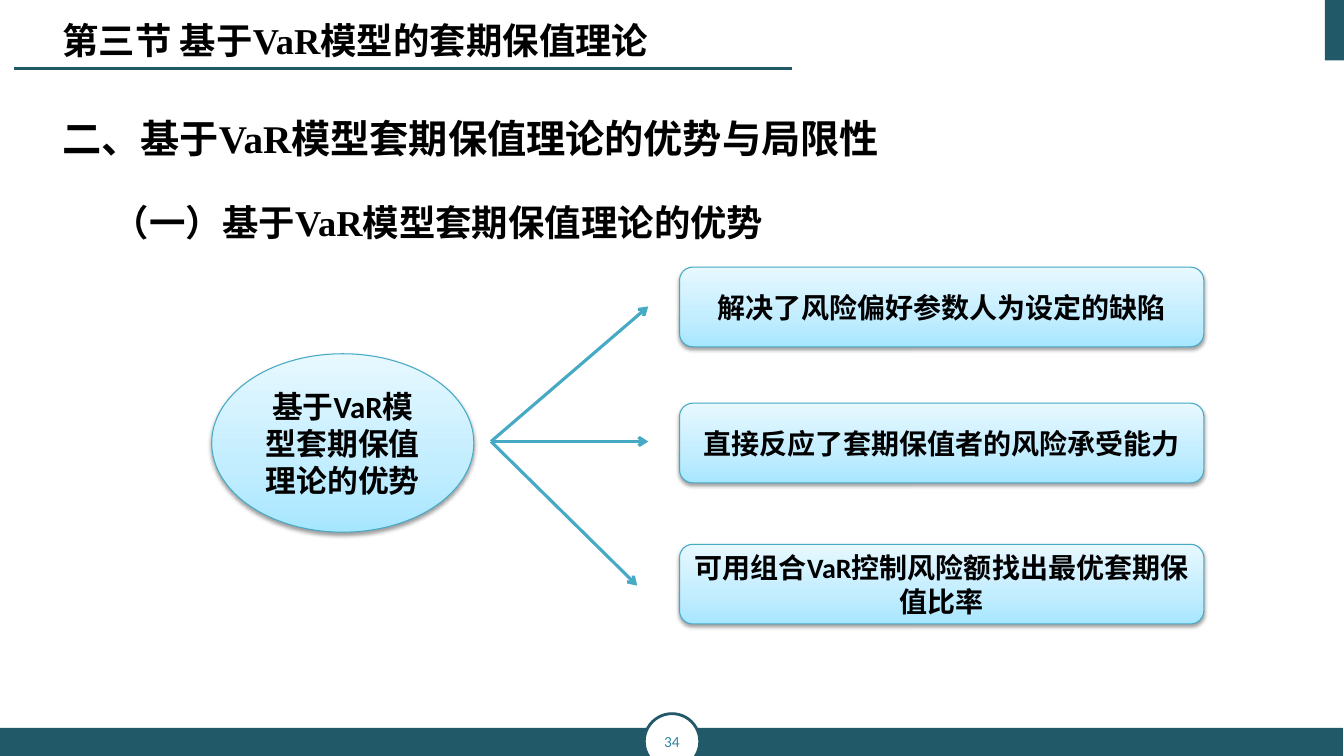
"""Build the slide on the advantages of VaR-based hedging theory."""
from copy import deepcopy
from dataclasses import dataclass
from typing import Optional

from lxml.etree import SubElement
from pptx import Presentation
from pptx.dml.color import RGBColor
from pptx.enum.shapes import MSO_CONNECTOR, MSO_SHAPE
from pptx.enum.text import MSO_ANCHOR, PP_ALIGN
from pptx.oxml.ns import qn
from pptx.util import Inches, Pt

CELL = Inches(0.1)
COLUMNS, ROWS = 133.3, 75

TEAL = RGBColor(0x21, 0x59, 0x68)
PAGE_BLUE = RGBColor(0x31, 0x85, 0x9C)
EDGE_BLUE = RGBColor(0x46, 0xAA, 0xC5)
WHITE = RGBColor(0xFF, 0xFF, 0xFF)
BLACK = RGBColor(0, 0, 0)
GLOW = (
    (0, RGBColor(0xA7, 0xE6, 0xFF)),
    (0.35, RGBColor(0xC1, 0xED, 0xFF)),
    (1, RGBColor(0xE7, 0xF8, 0xFF)),
)
HAN_FONT = "Noto Sans CJK SC"


@dataclass(frozen=True)
class Area:
    column: float
    row: float
    columns: float
    rows: float

    def lengths(self):
        return [round(n * CELL) for n in (self.column, self.row, self.columns, self.rows)]


@dataclass(frozen=True)
class Style:
    size: float
    latin: str = "Calibri"
    color: RGBColor = BLACK
    bold: bool = True


@dataclass(frozen=True)
class Panel:
    area: Area
    kind: MSO_SHAPE
    fill: Optional[RGBColor] = None
    edge: Optional[RGBColor] = None
    edge_width: float = 0.75
    words: str = ""
    style: Style = Style(20)


@dataclass(frozen=True)
class Stroke:
    start: tuple
    end: tuple
    color: RGBColor
    width: float
    arrow: bool = False


@dataclass(frozen=True)
class Heading:
    words: str
    style: Style
    layout: dict


def write(paragraph, words: str, style: Style, layout: dict) -> None:
    for name, value in layout.items():
        setattr(paragraph, name, value)
    run = paragraph.add_run()
    run.text = words
    looks = {"size": Pt(style.size), "name": style.latin, "bold": style.bold}
    for name, value in looks.items():
        setattr(run.font, name, value)
    run.font.color.rgb = style.color
    SubElement(run.font._element, qn("a:ea"), typeface=HAN_FONT)


def add_glow(shape) -> None:
    shape.fill.gradient()
    shape.fill.gradient_angle = 90
    stops = shape.element.find(".//" + qn("a:gsLst"))
    stops.insert(1, deepcopy(stops[0]))
    for stop, (position, color) in zip(shape.fill.gradient_stops, GLOW):
        stop.position = position
        stop.color.rgb = color
    effects = shape.element.spPr.find(qn("a:effectLst"))
    shadow = SubElement(effects, qn("a:outerShdw"), blurRad=str(Pt(3.1)),
                        dist=str(Pt(1.6)), dir="5400000", rotWithShape="0")
    tone = SubElement(shadow, qn("a:srgbClr"), val=str(BLACK))
    SubElement(tone, qn("a:alpha"), val="38000")


def add_panel(slide, panel: Panel) -> None:
    shape = slide.shapes.add_shape(panel.kind, *panel.area.lengths())
    shape.shadow.inherit = False
    if panel.fill is None:
        add_glow(shape)
    else:
        shape.fill.solid()
        shape.fill.fore_color.rgb = panel.fill
    if panel.edge is None:
        shape.line.fill.background()
    else:
        shape.line.color.rgb = panel.edge
        shape.line.width = Pt(panel.edge_width)
    if panel.words:
        shape.text_frame.vertical_anchor = MSO_ANCHOR.MIDDLE
        write(shape.text_frame.paragraphs[0], panel.words, panel.style,
              {"alignment": PP_ALIGN.CENTER})


def add_stroke(slide, stroke: Stroke) -> None:
    ends = [round(n * CELL) for n in (*stroke.start, *stroke.end)]
    connector = slide.shapes.add_connector(MSO_CONNECTOR.STRAIGHT, *ends)
    connector.line.color.rgb = stroke.color
    connector.line.width = Pt(stroke.width)
    if stroke.arrow:
        SubElement(connector.line._get_or_add_ln(), qn("a:tailEnd"), type="arrow")
    SubElement(connector.element.spPr, qn("a:effectLst"))


def add_headings(slide, area: Area, headings: tuple) -> None:
    frame = slide.shapes.add_textbox(*area.lengths()).text_frame
    frame.word_wrap = True
    for index, heading in enumerate(headings):
        paragraph = frame.add_paragraph() if index else frame.paragraphs[0]
        if heading.layout.get("first_line"):
            paragraph._p.get_or_add_pPr().set("indent", str(heading.layout["first_line"]))
        layout = {k: v for k, v in heading.layout.items() if k != "first_line"}
        write(paragraph, heading.words, heading.style, layout)


FRAME = (
    Panel(Area(131.4, 0, 2, 6), MSO_SHAPE.RECTANGLE, TEAL),
    Panel(Area(0, 72.2, 133.2, 2.8), MSO_SHAPE.RECTANGLE, TEAL),
    Panel(Area(63.9, 70.8, 5.5, 5.5), MSO_SHAPE.OVAL, WHITE, TEAL, 2, "34",
          Style(11, color=PAGE_BLUE, bold=False)),
)
TOPIC = Panel(Area(21, 35.1, 26, 17.7), MSO_SHAPE.OVAL, edge=EDGE_BLUE,
              words="基于VaR模型套期保值理论的优势", style=Style(22))
ADVANTAGES = (
    (26.5, "解决了风险偏好参数人为设定的缺陷"),
    (40, "直接反应了套期保值者的风险承受能力"),
    (54, "可用组合VaR控制风险额找出最优套期保值比率"),
)
ARROW_START = (48.7, 43.8)
ARROW_ENDS = ((64.3, 30.4), (64.3, 43.8), (63.2, 58.1))
SERIF = "Times New Roman"
TITLE = (Heading("第三节 基于VaR模型的套期保值理论", Style(26, SERIF), {}),)
OUTLINE = (
    Heading("二、基于VaR模型套期保值理论的优势与局限性", Style(28, SERIF),
            {"line_spacing": 1.7}),
    Heading("（一）基于VaR模型套期保值理论的优势", Style(26, SERIF),
            {"line_spacing": 1.7, "space_before": Pt(6), "first_line": 5 * CELL}),
)


def main() -> None:
    deck = Presentation()
    deck.slide_width = round(COLUMNS * CELL)
    deck.slide_height = ROWS * CELL
    slide = deck.slides.add_slide(deck.slide_layouts[6])
    for panel in FRAME:
        add_panel(slide, panel)
    add_stroke(slide, Stroke((78.6, 6.8), (1.4, 6.8), TEAL, 1.5))
    add_headings(slide, Area(5.2, 7.6, 125.2, 61.6), OUTLINE)
    add_headings(slide, Area(5.2, 1.3, 78, 5.4), TITLE)
    add_panel(slide, TOPIC)
    for end in ARROW_ENDS:
        add_stroke(slide, Stroke(ARROW_START, end, EDGE_BLUE, 2.25, arrow=True))
    for row, words in ADVANTAGES:
        add_panel(slide, Panel(Area(67.4, row, 52, 7.9), MSO_SHAPE.ROUNDED_RECTANGLE,
                               edge=EDGE_BLUE, words=words))
    deck.save("out.pptx")


if __name__ == "__main__":
    main()
